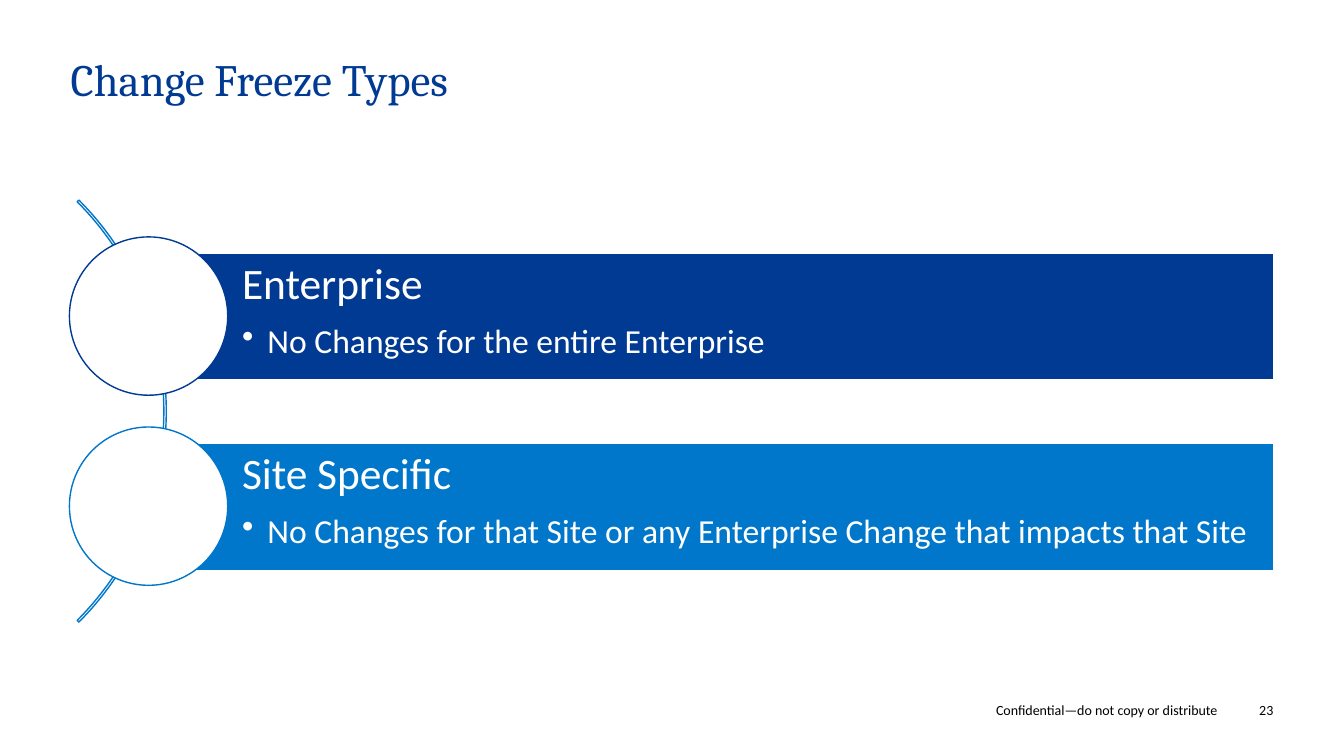
from lxml.etree import SubElement
from pptx import Presentation
from pptx.dml.color import RGBColor
from pptx.enum.shapes import MSO_SHAPE
from pptx.enum.text import MSO_ANCHOR, MSO_AUTO_SIZE, PP_ALIGN
from pptx.oxml.ns import qn
from pptx.util import Cm, Pt

NAVY = RGBColor(0x00, 0x3A, 0x93)
BLUE = RGBColor(0x00, 0x77, 0xCA)
WHITE = RGBColor(0xFF, 0xFF, 0xFF)
BLACK = RGBColor(0x00, 0x00, 0x00)

FRAME = {
    "word_wrap": True,
    "auto_size": MSO_AUTO_SIZE.NONE,
    "vertical_anchor": MSO_ANCHOR.TOP,
    "margin_left": 0,
    "margin_top": 0,
    "margin_right": 0,
    "margin_bottom": 0,
}
BAR_FRAME = FRAME | {
    "margin_left": Cm(2.54),
    "margin_top": Cm(0.23),
    "margin_right": Cm(0.23),
    "margin_bottom": Cm(0.23),
}


def write(para, text, font, size, color, **layout):
    span = para.add_run()
    span.text = text
    span.font.name = font
    span.font.size = Pt(size)
    span.font.color.rgb = color
    for name, value in layout.items():
        setattr(para, name, value)


def draw(page, kind, bounds, line, fill=None):
    shape = page.shapes.add_shape(kind, *[Cm(length) for length in bounds])
    shape.shadow.inherit = False
    shape.line.color.rgb = line
    shape.line.width = Pt(1)
    if fill is None:
        shape.fill.background()
    else:
        shape.fill.solid()
        shape.fill.fore_color.rgb = fill
    return shape


deck = Presentation()
deck.slide_width = Cm(33.87)
deck.slide_height = Cm(19.05)
page = deck.slides.add_slide(deck.slide_layouts[5])

title = page.shapes.title
title.left, title.top, title.width, title.height = Cm(1.78), Cm(1.45), Cm(30.28), Cm(2.67)
for name, value in FRAME.items():
    setattr(title.text_frame, name, value)
write(title.text_frame.paragraphs[0], "Change Freeze Types", "Cambria", 32, NAVY,
      alignment=PP_ALIGN.LEFT, line_spacing=0.9)

arc = draw(page, MSO_SHAPE.BLOCK_ARC, (-10.85, 2.84, 15.04, 15.04), BLUE)
for index, value in enumerate((189, 27, 0.004)):
    arc.adjustments[index] = value

freezes = [
    ("Enterprise", "No Changes for the entire Enterprise", NAVY),
    ("Site Specific", "No Changes for that Site or any Enterprise Change that impacts that Site", BLUE),
]
for row, (heading, detail, color) in enumerate(freezes):
    offset = row * 4.79
    bar = draw(page, MSO_SHAPE.RECTANGLE, (3.56, 6.38 + offset, 28.55, 3.2), WHITE, color)
    for name, value in BAR_FRAME.items():
        setattr(bar.text_frame, name, value)
    write(bar.text_frame.paragraphs[0], heading, "Calibri", 31, WHITE,
          alignment=PP_ALIGN.LEFT, line_spacing=0.9, space_after=Pt(11))
    para = bar.text_frame.add_paragraph()
    write(para, detail, "Calibri", 24, WHITE,
          alignment=PP_ALIGN.LEFT, line_spacing=0.9, level=1)
    properties = para._p.get_or_add_pPr()
    properties.set("marL", str(Cm(0.64)))
    properties.set("indent", str(Cm(-0.64)))
    SubElement(properties, qn("a:buChar")).set("char", "•")
    draw(page, MSO_SHAPE.OVAL, (1.75, 5.97 + offset, 3.99, 3.99), color, WHITE)

footers = [
    ("Confidential—do not copy or distribute", 9.27, 21.41),
    ("23", 31.12, 0.97),
]
for text, left, width in footers:
    box = page.shapes.add_textbox(Cm(left), Cm(17.68), Cm(width), Cm(0.43))
    for name, value in FRAME.items():
        setattr(box.text_frame, name, value)
    write(box.text_frame.paragraphs[0], text, "Calibri", 10, BLACK, alignment=PP_ALIGN.RIGHT)

deck.save("out.pptx")
